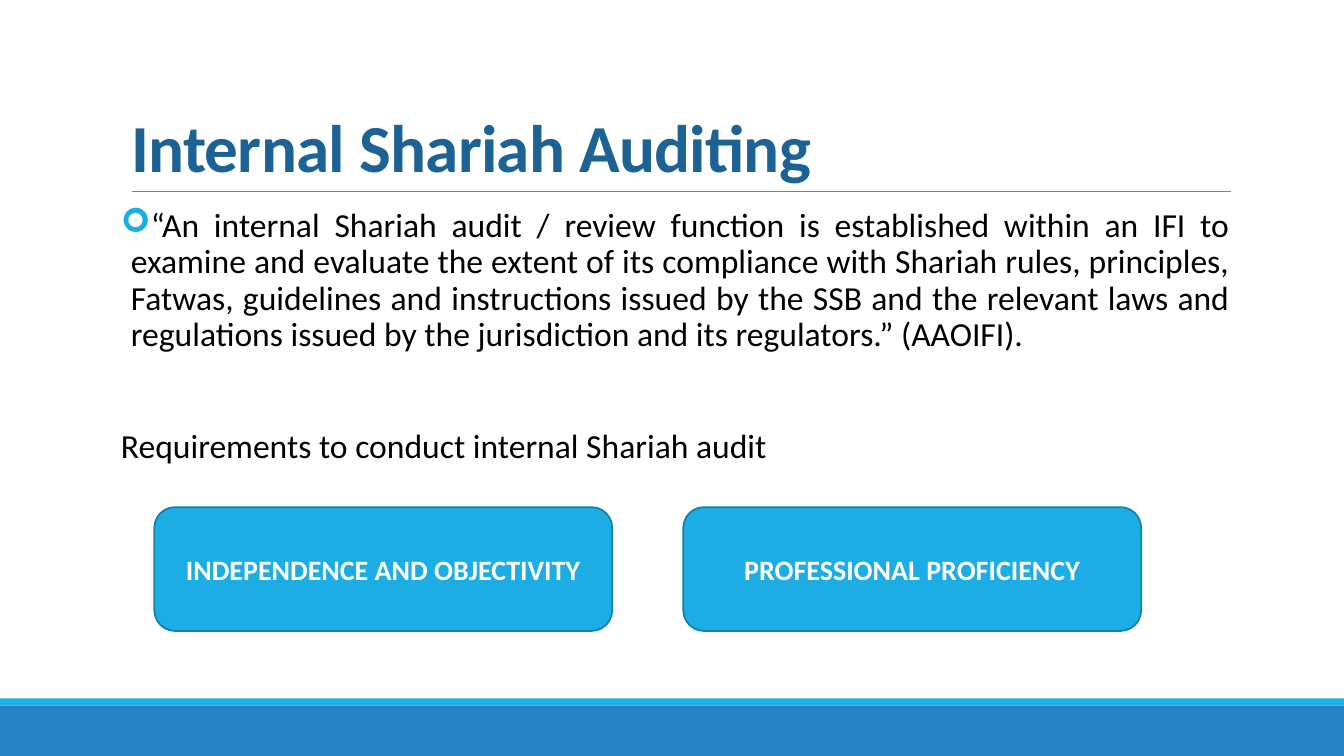
from lxml import etree
from pptx import Presentation
from pptx.dml.color import RGBColor
from pptx.enum import shapes, text
from pptx.oxml import ns
from pptx.util import Cm, Pt

BLUE, SKY, EDGE, NAVY = "2683C6", "1CADE4", "1580A9", "1D6294"
FONT = "Calibri"
MARGIN, CONTENT_WIDTH = 3.05, 27.94
QUOTE = (
    "“An internal Shariah audit / review function is established within an IFI to "
    "examine and evaluate the extent of its compliance with Shariah rules, principles, "
    "Fatwas, guidelines and instructions issued by the SSB and the relevant laws and "
    "regulations issued by the jurisdiction and its regulators.” (AAOIFI)."
)
REQUIREMENTS = ["INDEPENDENCE AND OBJECTIVITY", "PROFESSIONAL PROFICIENCY"]


def colour(value):
    return RGBColor.from_string(value)


def write(paragraph, words, size=24, fill="000000", bold=False,
          align=text.PP_ALIGN.LEFT, line=1.0, before=0, after=0, tracking=None):
    paragraph.alignment = align
    paragraph.line_spacing = line
    paragraph.space_before, paragraph.space_after = Pt(before), Pt(after)
    run = paragraph.add_run()
    run.text = words
    run.font.name, run.font.size, run.font.bold = FONT, Pt(size), bold
    run.font.color.rgb = colour(fill)
    if tracking is not None:
        run.font._element.set("spc", str(tracking))


def add_bullet(paragraph, char, fill, indent):
    properties = paragraph._p.get_or_add_pPr()
    properties.set("marL", str(indent))
    properties.set("indent", str(-indent))
    bullet_colour = etree.SubElement(properties, ns.qn("a:buClr"))
    etree.SubElement(bullet_colour, ns.qn("a:srgbClr"), val=fill)
    etree.SubElement(properties, ns.qn("a:buFont"), typeface="Wingdings")
    etree.SubElement(properties, ns.qn("a:buChar"), char=char)


def add_box(slide, kind, left, top, width, height, fill, edge=None):
    box = slide.shapes.add_shape(kind, Cm(left), Cm(top), Cm(width), Cm(height))
    box.shadow.inherit = False
    box.fill.solid()
    box.fill.fore_color.rgb = colour(fill)
    if edge:
        box.line.color.rgb = colour(edge)
        box.line.width = Pt(1.25)
    else:
        box.line.fill.background()
    return box


def add_rule(slide, left, right, top):
    rule = slide.shapes.add_connector(
        shapes.MSO_CONNECTOR.STRAIGHT, Cm(left), Cm(top), Cm(right), Cm(top))
    rule.line.color.rgb = colour("808080")
    rule.line.width = Pt(0.5)
    etree.SubElement(rule._element.spPr, ns.qn("a:effectLst"))


def add_title(slide, words):
    title = slide.shapes.title
    title.left, title.top = Cm(MARGIN), Cm(0.79)
    title.width, title.height = Cm(CONTENT_WIDTH), Cm(4.04)
    frame = title.text_frame
    frame.vertical_anchor = text.MSO_ANCHOR.BOTTOM
    frame.auto_size = text.MSO_AUTO_SIZE.NONE
    write(frame.paragraphs[0], words, size=48, fill=NAVY, bold=True,
          line=0.85, tracking=-50)


def add_body(slide):
    body = slide.shapes.add_textbox(
        Cm(MARGIN), Cm(5.13), Cm(CONTENT_WIDTH), Cm(12.45))
    frame = body.text_frame
    frame.word_wrap = True
    frame.margin_left = frame.margin_right = 0
    justified = text.PP_ALIGN.JUSTIFY
    quote = frame.paragraphs[0]
    add_bullet(quote, "➢", SKY, Cm(0.25))
    write(quote, QUOTE, align=justified, line=0.9, after=2)
    write(frame.add_paragraph(), "Requirements to conduct internal Shariah audit",
          align=justified, line=0.9, before=52, after=2)


def add_requirement(slide, words, left):
    card = add_box(slide, shapes.MSO_SHAPE.ROUNDED_RECTANGLE,
                   left, 12.78, 11.54, 3.12, SKY, EDGE)
    frame = card.text_frame
    frame.word_wrap = True
    frame.vertical_anchor = text.MSO_ANCHOR.MIDDLE
    write(frame.paragraphs[0], words, size=20, fill="FFFFFF", bold=True,
          align=text.PP_ALIGN.CENTER)


def main():
    deck = Presentation()
    deck.slide_width, deck.slide_height = Cm(33.87), Cm(19.05)
    slide = deck.slides.add_slide(deck.slide_layouts[5])

    # Footer bands and title rule
    add_box(slide, shapes.MSO_SHAPE.RECTANGLE, 0, 17.78, 33.87, 1.27, BLUE)
    add_box(slide, shapes.MSO_SHAPE.RECTANGLE, 0, 17.6, 33.87, 0.18, SKY)
    add_rule(slide, 3.33, 31.01, 4.83)

    # Title and definition
    add_title(slide, "Internal Shariah Auditing")
    add_body(slide)

    # Requirement cards
    for index, requirement in enumerate(REQUIREMENTS):
        add_requirement(slide, requirement, 3.89 + index * 13.33)

    deck.save("out.pptx")


if __name__ == "__main__":
    main()
